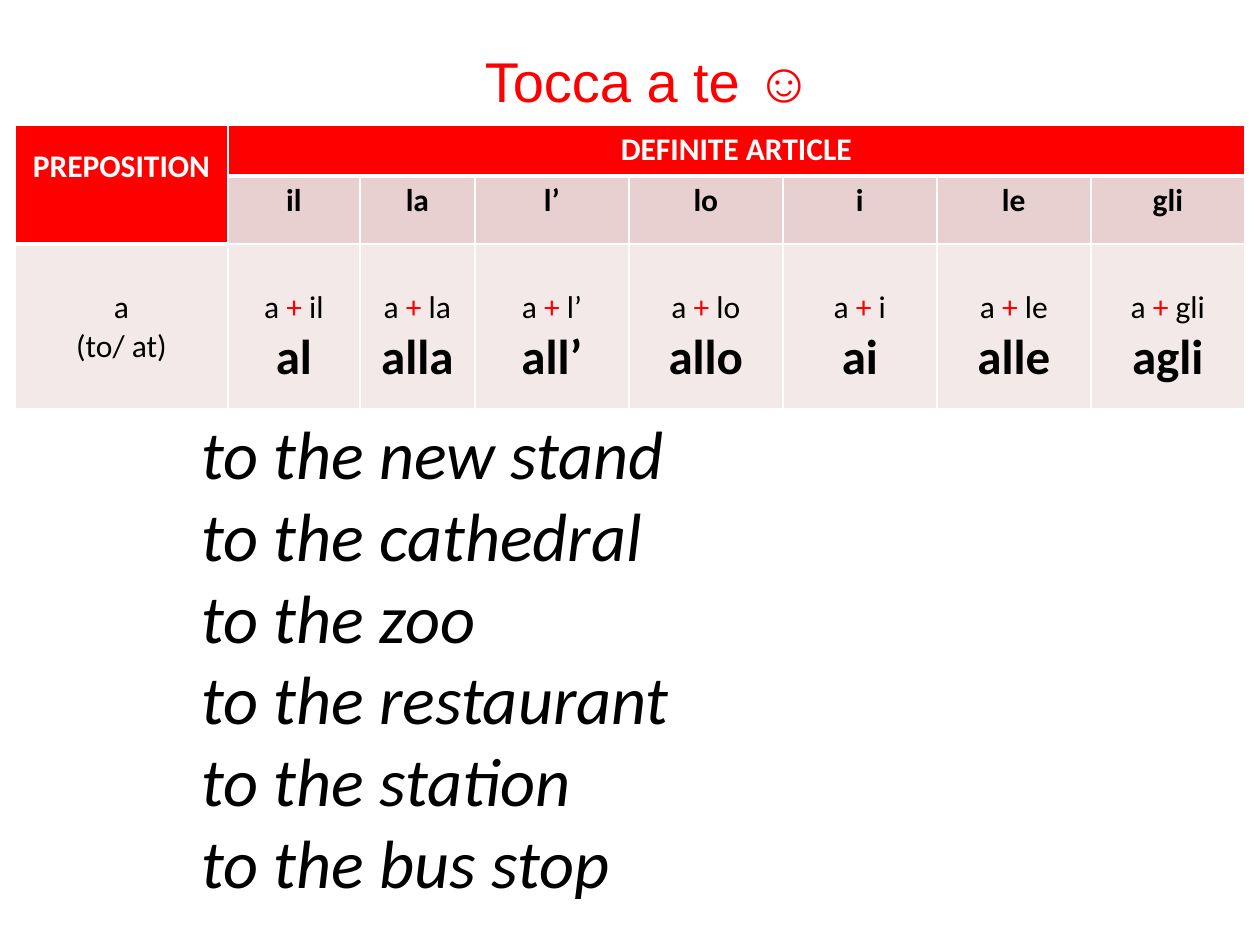
"""Build a slide that drills the Italian preposition "a" with the definite articles."""
from lxml.etree import SubElement
from pptx import Presentation
from pptx.dml.color import RGBColor
from pptx.enum.text import MSO_ANCHOR, PP_ALIGN
from pptx.oxml.ns import qn
from pptx.util import Emu, Pt

RED = RGBColor(0xFF, 0x00, 0x00)
BLACK = RGBColor(0x00, 0x00, 0x00)
WHITE = RGBColor(0xFF, 0xFF, 0xFF)
ROSE = RGBColor(0xE8, 0xD0, 0xD0)
PALE_ROSE = RGBColor(0xF4, 0xE9, 0xE9)

EMU_PER_PX = 914400 / 126
HEADER = {"size": Pt(18), "bold": True, "color": WHITE}
ARTICLE = {"size": Pt(18), "bold": True, "color": BLACK}
PLAIN = {"size": Pt(18), "bold": False, "color": BLACK}
PLUS = {"size": Pt(18), "bold": False, "color": RED}
RESULT = {"size": Pt(28), "bold": True, "color": BLACK}
TITLE = {"name": "Arial", "size": Pt(32), "color": RED}
PHRASE = {"size": Pt(39), "italic": True, "color": BLACK}


def px(length):
    return Emu(round(length * EMU_PER_PX))


def write(frame, lines, align):
    frame.word_wrap = True
    for index, spans in enumerate(lines):
        para = frame.paragraphs[0] if index == 0 else frame.add_paragraph()
        para.alignment = align
        for text, style in spans:
            span = para.add_run()
            span.text = text
            for key, value in {"name": "Calibri", **style}.items():
                if key == "color":
                    span.font.color.rgb = value
                else:
                    setattr(span.font, key, value)


deck = Presentation()
deck.slide_width, deck.slide_height = px(1260), px(945)
page = deck.slides.add_slide(deck.slide_layouts[6])

phrases = ["new stand", "cathedral", "zoo", "restaurant", "station", "bus stop"]
text_boxes = [
    ((82, 47, 1134, 64), [[("Tocca a te ☺", TITLE)]], PP_ALIGN.CENTER),
    ((201, 411, 900, 500), [[(f"to the {place}", PHRASE)] for place in phrases], PP_ALIGN.LEFT),
]
for bounds, lines, align in text_boxes:
    box = page.shapes.add_textbox(*map(px, bounds))
    for side in ("left", "top", "right", "bottom"):
        setattr(box.text_frame, f"margin_{side}", 0)
    write(box.text_frame, lines, align)

column_widths = [213, 132, 115] + [154] * 5
row_heights = [51, 68, 165]
table = page.shapes.add_table(
    3, 8, px(15), px(125), px(sum(column_widths)), px(sum(row_heights))
).table
for column, width in zip(table.columns, column_widths):
    column.width = px(width)
for row, height in zip(table.rows, row_heights):
    row.height = px(height)

contents = {
    (0, 0): [[("PREPOSITION", HEADER)]],
    (0, 1): [[("DEFINITE ARTICLE", HEADER)]],
    (2, 0): [[("a", PLAIN)], [("(to/ at)", PLAIN)]],
}
contractions = [("il", "al"), ("la", "alla"), ("l’", "all’"), ("lo", "allo"),
                ("i", "ai"), ("le", "alle"), ("gli", "agli")]
for column, (article, result) in enumerate(contractions, start=1):
    contents[1, column] = [[(article, ARTICLE)]]
    contents[2, column] = [
        [("a ", PLAIN), ("+ ", PLUS), (article, PLAIN)],
        [(result, RESULT)],
    ]

table.cell(0, 0).merge(table.cell(1, 0))
table.cell(0, 1).merge(table.cell(0, 7))
header_cells = {(0, column) for column in range(8)} | {(1, 0)}
for row in range(3):
    for column in range(8):
        cell = table.cell(row, column)
        properties = cell._tc.get_or_add_tcPr()
        borders = {
            "lnL": 1,
            "lnR": 1,
            "lnT": 3 if (row - 1, column) in header_cells else 1,
            "lnB": 3 if (row, column) in header_cells else 1,
        }
        for tag, width in borders.items():
            line = SubElement(properties, qn(f"a:{tag}"), w=str(Pt(width)))
            fill = SubElement(line, qn("a:solidFill"))
            SubElement(fill, qn("a:srgbClr"), val=str(WHITE))
        cell.fill.solid()
        cell.fill.fore_color.rgb = (
            RED if (row, column) in header_cells else (RED, ROSE, PALE_ROSE)[row]
        )
        cell.vertical_anchor = MSO_ANCHOR.TOP
        cell.margin_left = cell.margin_right = px(9)
        cell.margin_top = px(23 if (row, column) == (0, 0) else (6, 6, 45)[row])
        cell.margin_bottom = px(6)
        if (row, column) in contents:
            write(cell.text_frame, contents[row, column], PP_ALIGN.CENTER)

deck.save("out.pptx")
